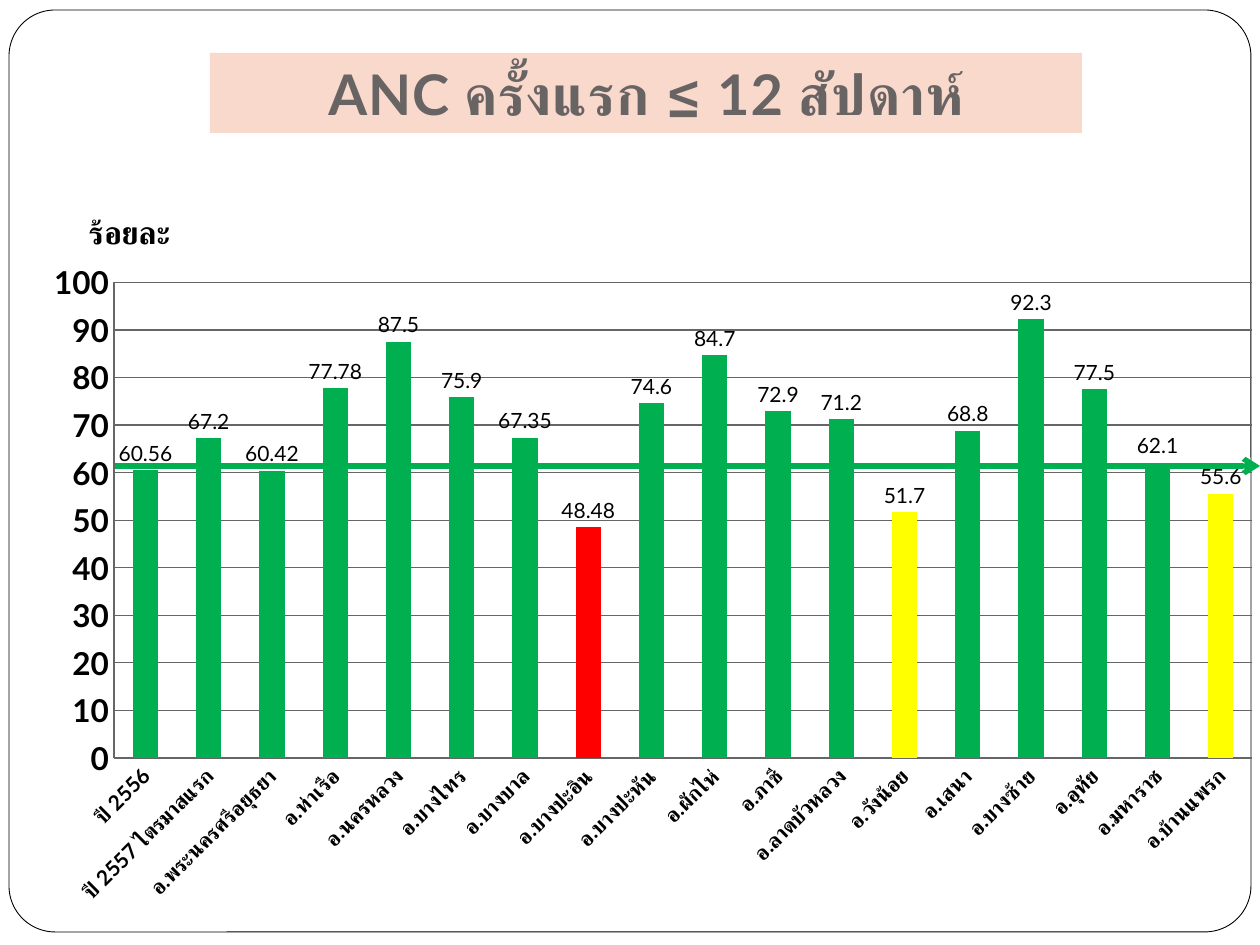
"""Build the slide charting first antenatal visits within 12 weeks by district."""
from dataclasses import dataclass
from typing import Any, NamedTuple

from lxml.etree import SubElement
from pptx import Presentation
from pptx.chart.data import CategoryChartData
from pptx.dml.color import RGBColor
from pptx.enum.chart import XL_CHART_TYPE as ChartType
from pptx.enum.chart import XL_LABEL_POSITION as LabelPosition
from pptx.enum.chart import XL_TICK_MARK as TickMark
from pptx.enum.shapes import MSO_CONNECTOR as Connector
from pptx.enum.shapes import MSO_SHAPE as Preset
from pptx.enum.text import MSO_ANCHOR as Anchor
from pptx.enum.text import PP_ALIGN as Align
from pptx.oxml import parse_xml
from pptx.oxml.ns import nsdecls, qn
from pptx.util import Pt

EMU_PER_PX = 914400 / 126


@dataclass(frozen=True)
class Theme:
    font: str = "Lato"
    chart_font: str = "Times New Roman"
    white: str = "FFFFFF"
    black: str = "000000"
    banner: str = "FAD9CD"
    heading: str = "696464"
    grid: str = "666666"
    green: str = "00B050"
    red: str = "FF0000"
    yellow: str = "FFFF00"
    heading_size: int = 32
    axis_size: int = 18
    label_size: int = 12


THEME = Theme()


class Box(NamedTuple):
    left: int
    top: int
    width: int
    height: int


class Bar(NamedTuple):
    name: str
    value: float
    color: str = THEME.green


@dataclass(frozen=True)
class Panel:
    preset: Preset
    box: Box
    fill: str
    outline: str = ""
    corner: float = 0


FRAME = Panel(Preset.ROUNDED_RECTANGLE, Box(9, 10, 1242, 922), THEME.white, THEME.black, 0.05)
BANNER = Panel(Preset.RECTANGLE, Box(210, 53, 872, 80), THEME.banner)
CHART_BOX = Box(21, 179, 1239, 766)
TARGET_LINE = Box(115, 466, 1145, 0)
PLOT_LAYOUT = {"layoutTarget": "inner", "xMode": "edge", "yMode": "edge",
               "x": 0.075, "y": 0.135, "w": 0.919, "h": 0.621}
TITLE_LAYOUT = {"xMode": "edge", "yMode": "edge", "x": 0.05, "y": 0.04}
BARS = (
    Bar("ปี 2556", 60.56),
    Bar("ปี 2557 ไตรมาสแรก", 67.2),
    Bar("อ.พระนครศรีอยุธยา", 60.42),
    Bar("อ.ท่าเรือ", 77.78),
    Bar("อ.นครหลวง", 87.5),
    Bar("อ.บางไทร", 75.9),
    Bar("อ.บางบาล", 67.35),
    Bar("อ.บางปะอิน", 48.48, THEME.red),
    Bar("อ.บางปะหัน", 74.6),
    Bar("อ.ผักไห่", 84.7),
    Bar("อ.ภาชี", 72.9),
    Bar("อ.ลาดบัวหลวง", 71.2),
    Bar("อ.วังน้อย", 51.7, THEME.yellow),
    Bar("อ.เสนา", 68.8),
    Bar("อ.บางซ้าย", 92.3),
    Bar("อ.อุทัย", 77.5),
    Bar("อ.มหาราช", 62.1),
    Bar("อ.บ้านแพรก", 55.6, THEME.yellow),
)


def px(length: int) -> int:
    return round(length * EMU_PER_PX)


def emu(box: Box) -> list[int]:
    return [px(length) for length in box]


def apply(target: Any, values: dict[str, Any]) -> None:
    for name, value in values.items():
        setattr(target, name, value)


def style_font(font: Any, size: int, bold: bool = False,
               color: str = THEME.black, name: str = THEME.font) -> None:
    apply(font, {"name": name, "size": Pt(size), "bold": bold})
    font.color.rgb = RGBColor.from_string(color)


def paint(fill: Any, color: str) -> None:
    fill.solid()
    fill.fore_color.rgb = RGBColor.from_string(color)


def style_line(line: Any, color: str, width: float) -> None:
    paint(line.fill, color)
    line.width = Pt(width)


def draw_panel(slide: Any, panel: Panel) -> Any:
    shape = slide.shapes.add_shape(panel.preset, *emu(panel.box))
    shape.shadow.inherit = False
    paint(shape.fill, panel.fill)
    if panel.outline:
        style_line(shape.line, panel.outline, 0.5)
    else:
        shape.line.fill.background()
    if panel.corner:
        shape.adjustments[0] = panel.corner
    return shape


def write_heading(shape: Any, text: str) -> None:
    apply(shape.text_frame, {"word_wrap": True, "vertical_anchor": Anchor.MIDDLE})
    paragraph = shape.text_frame.paragraphs[0]
    paragraph.alignment = Align.CENTER
    run = paragraph.add_run()
    run.text = text
    style_font(run.font, THEME.heading_size, True, THEME.heading)
    run._r.get_or_add_rPr().set("spc", "50")


def place(parent: Any, values: dict[str, Any]) -> None:
    layout = parent.find(qn("c:layout"))
    if layout is None:
        layout = parse_xml(f"<c:layout {nsdecls('c')}/>")
        parent.insert(0, layout)
    manual = SubElement(layout, qn("c:manualLayout"))
    for name, value in values.items():
        SubElement(manual, qn(f"c:{name}")).set("val", str(value))


def style_axis(axis: Any, size: int) -> None:
    apply(axis, {"major_tick_mark": TickMark.NONE, "minor_tick_mark": TickMark.NONE})
    style_font(axis.tick_labels.font, size, True)
    style_line(axis.format.line, THEME.grid, 0.75)


def draw_chart(slide: Any, bars: tuple[Bar, ...], title: str) -> None:
    data = CategoryChartData()
    data.categories = [bar.name for bar in bars]
    data.add_series("Series 1", [bar.value for bar in bars])
    chart = slide.shapes.add_chart(ChartType.COLUMN_CLUSTERED, *emu(CHART_BOX), data).chart
    apply(chart, {"has_legend": False, "has_title": True})
    style_font(chart.font, THEME.axis_size, name=THEME.chart_font)
    chart.chart_title.text_frame.text = title
    style_font(chart.chart_title.text_frame.paragraphs[0].runs[0].font, THEME.axis_size, True)
    place(chart.chart_title._element, TITLE_LAYOUT)
    place(chart._chartSpace.chart.plotArea, PLOT_LAYOUT)

    style_axis(chart.category_axis, THEME.label_size)
    chart.category_axis._element.xpath("c:txPr/a:bodyPr")[0].set("rot", "-2700000")
    style_axis(chart.value_axis, THEME.axis_size)
    apply(chart.value_axis, {"minimum_scale": 0, "maximum_scale": 100, "major_unit": 10,
                             "has_major_gridlines": True})
    style_line(chart.value_axis.major_gridlines.format.line, THEME.grid, 0.75)

    plot = chart.plots[0]
    apply(plot, {"gap_width": 150, "vary_by_categories": False, "has_data_labels": True})
    apply(plot.data_labels, {"show_value": True, "position": LabelPosition.OUTSIDE_END})
    style_font(plot.data_labels.font, THEME.label_size)
    series = plot.series[0]
    paint(series.format.fill, THEME.green)
    for index, bar in enumerate(bars):
        if bar.color != THEME.green:
            paint(series.points[index].format.fill, bar.color)


def draw_arrow(slide: Any, box: Box) -> None:
    left, top, width, height = emu(box)
    arrow = slide.shapes.add_connector(Connector.STRAIGHT, left, top, left + width, top + height)
    style_line(arrow.line, THEME.green, 3)
    properties = arrow._element.spPr
    SubElement(properties.find(qn("a:ln")), qn("a:tailEnd")).set("type", "arrow")
    SubElement(properties, qn("a:effectLst"))


def main() -> None:
    presentation = Presentation()
    apply(presentation, {"slide_width": px(1260), "slide_height": px(945)})
    slide = presentation.slides.add_slide(presentation.slide_layouts[6])
    draw_panel(slide, FRAME)
    draw_chart(slide, BARS, "ร้อยละ")
    write_heading(draw_panel(slide, BANNER), "ANC ครั้งแรก ≤ 12 สัปดาห์")
    draw_arrow(slide, TARGET_LINE)
    presentation.save("out.pptx")


if __name__ == "__main__":
    main()
